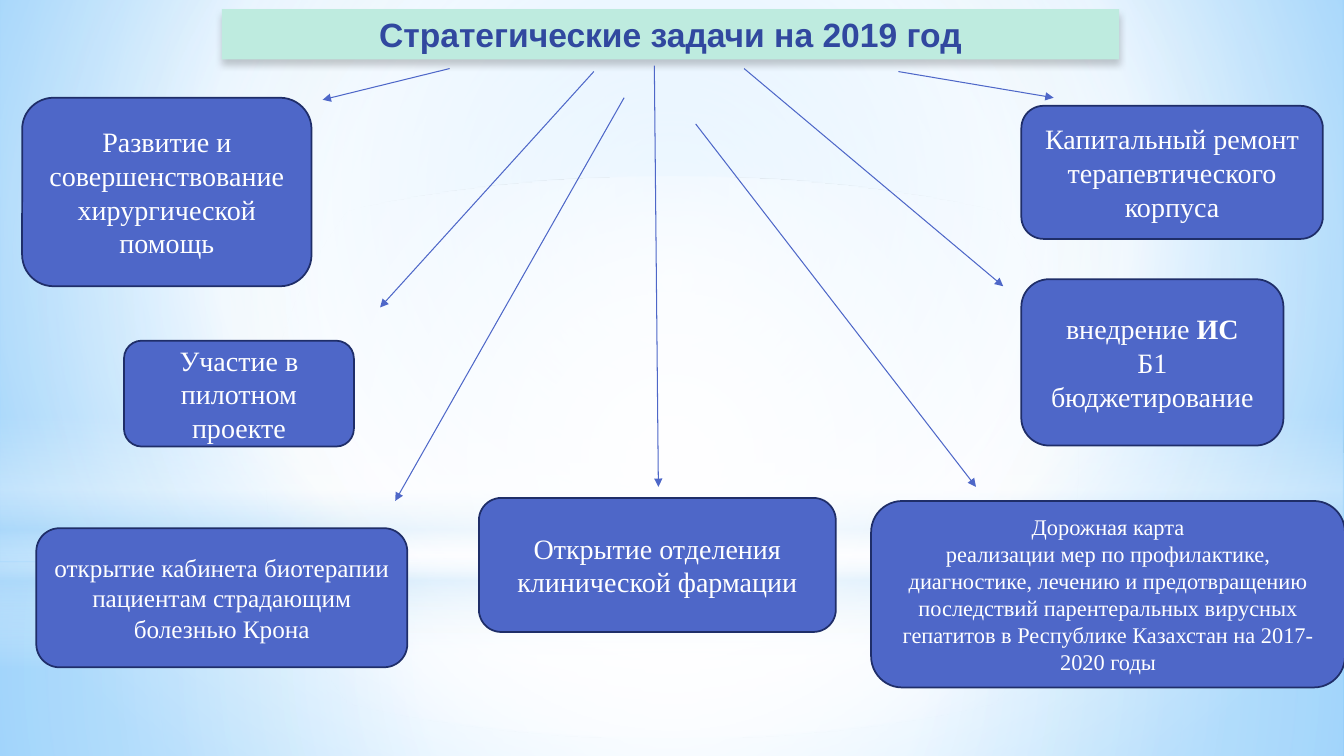
from lxml import etree
from pptx import Presentation
from pptx.dml.color import RGBColor
from pptx.enum.shapes import MSO_CONNECTOR, MSO_SHAPE
from pptx.enum.text import MSO_ANCHOR, PP_ALIGN
from pptx.oxml import parse_xml
from pptx.oxml.ns import nsdecls, qn
from pptx.util import Inches, Pt

RECT, OVAL, ROUNDED = MSO_SHAPE.RECTANGLE, MSO_SHAPE.OVAL, MSO_SHAPE.ROUNDED_RECTANGLE
STRAIGHT = MSO_CONNECTOR.STRAIGHT
MIDDLE, CENTER = MSO_ANCHOR.MIDDLE, PP_ALIGN.CENTER
W, H = 13.33, 7.5
BLUE, NAVY, WHITE, SKY = "4E67C8", "1F2E69", "FFFFFF", "B4DCFA"

BACKGROUND = [(0, "9ED5FF", 100), (60, WHITE, 100), (100, "5BB9FF", 100)]
MIDPOINT = (50, 50, 50, 50)
BACKDROP = [
    (RECT, (0, 5.58, W, 1.92), [(0, WHITE, 91), (37, WHITE, 76), (100, SKY, 79)], MIDPOINT),
    (RECT, (0, 0, W, 5.58), [(0, WHITE, 89), (48, WHITE, 62), (100, SKY, 79)], MIDPOINT),
    (RECT, (0, 4.12, W, 2.5), [(0, WHITE, 0), (29, WHITE, 30), (45, SKY, 40),
                               (55, WHITE, 26), (65, SKY, 60), (100, WHITE, 0)], None),
    (OVAL, (0, 1.75, W, 5.58), [(0, WHITE, 100), (56, WHITE, 0)], MIDPOINT),
]
TASKS = [
    ((0.22, 0.97, 2.87, 1.87), 20, ["Развитие и совершенствование хирургической помощь"],
     (4.46, 0.68, 3.2, 0.99)),
    ((10.13, 1.05, 2.99, 1.32), 20, ["Капитальный ремонт терапевтического корпуса"],
     (8.91, 0.71, 10.45, 0.97)),
    ((1.23, 3.38, 2.28, 1.05), 20, ["Участие в пилотном проекте"],
     (5.89, 0.71, 3.77, 3.05)),
    ((10.13, 2.77, 2.6, 1.65), 20, ["внедрение *ИС*", "Б1", "бюджетирование"],
     (7.38, 0.68, 9.95, 2.84)),
    ((4.75, 4.94, 3.54, 1.33), 20, ["Открытие отделения клинической фармации"],
     (6.49, 0.65, 6.53, 4.83)),
    ((0.36, 5.24, 3.68, 1.38), 18,
     ["открытие кабинета биотерапии пациентам страдающим болезнью Крона"],
     (6.19, 0.97, 3.92, 4.97)),
    ((8.64, 4.97, 4.7, 1.85), 16,
     ["Дорожная карта",
      "реализации мер по профилактике, диагностике, лечению и предотвращению последствий "
      "парентеральных вирусных гепатитов в Республике Казахстан на 2017-2020 годы"],
     (6.9, 1.23, 9.68, 4.83)),
]


def rgb(color):
    return RGBColor.from_string(color)


def lengths(box):
    return [Inches(v) for v in box]


def set_gradient(props, stops, focus):
    stop_xml = "".join(
        f'<a:gs pos="{pos * 1000}"><a:srgbClr val="{color}">'
        f'<a:alpha val="{alpha * 1000}"/></a:srgbClr></a:gs>'
        for pos, color, alpha in stops)
    if focus:
        sides = " ".join(f'{side}="{v * 1000}"' for side, v in zip("ltrb", focus))
        direction = f'<a:path path="circle"><a:fillToRect {sides}/></a:path>'
    else:
        direction = '<a:lin ang="5400000" scaled="0"/>'
    gradient = parse_xml(f'<a:gradFill {nsdecls("a")} rotWithShape="1">'
                         f'<a:gsLst>{stop_xml}</a:gsLst>{direction}</a:gradFill>')
    props.replace(props.find(qn("a:solidFill")), gradient)


def write_text(tf, lines, fmt):
    tf.word_wrap = True
    tf.vertical_anchor = MIDDLE
    for i, line in enumerate(lines):
        p = tf.add_paragraph() if i else tf.paragraphs[0]
        p.alignment = CENTER
        for j, part in enumerate(line.split("*")):
            if part:
                r = p.add_run()
                r.text = part
                r.font.color.rgb = rgb(fmt["color"])
                values = {"name": fmt["name"], "size": Pt(fmt["size"]),
                          "bold": fmt["bold"] or j % 2 == 1}
                for key, value in values.items():
                    setattr(r.font, key, value)


def add_backdrop(s):
    s.background.fill.solid()
    set_gradient(s.element.find(".//" + qn("p:bgPr")), BACKGROUND, (20, 10, 20, 60))
    for kind, box, stops, focus in BACKDROP:
        sp = s.shapes.add_shape(kind, *lengths(box))
        sp.shadow.inherit = False
        sp.line.fill.background()
        sp.fill.solid()
        set_gradient(sp.element.spPr, stops, focus)


def add_title(s, box, text):
    sp = s.shapes.title
    s.shapes.element.append(sp.element)
    for key, value in zip(("left", "top", "width", "height"), lengths(box)):
        setattr(sp, key, value)
    sp.fill.solid()
    sp.fill.fore_color.rgb = rgb("BEEBDF")
    sp.line.fill.background()
    sp.element.spPr.append(parse_xml(
        f'<a:effectLst {nsdecls("a")}><a:outerShdw blurRad="{Pt(5)}" dist="{Pt(4)}" '
        'dir="5400000" algn="t" rotWithShape="0"><a:srgbClr val="000000">'
        '<a:alpha val="20000"/></a:srgbClr></a:outerShdw></a:effectLst>'))
    write_text(sp.text_frame, [text],
               {"name": "Arial", "size": 24, "color": "31489F", "bold": True})


def add_arrow(s, ends):
    line = s.shapes.add_connector(STRAIGHT, *lengths(ends))
    line.line.color.rgb = rgb(BLUE)
    line.line.width = Pt(0.75)
    spPr = line.element.spPr
    etree.SubElement(spPr.find(qn("a:ln")), qn("a:tailEnd"), type="triangle")
    etree.SubElement(spPr, qn("a:effectLst"))


def add_task(s, box, size, lines):
    sp = s.shapes.add_shape(ROUNDED, *lengths(box))
    sp.shadow.inherit = False
    sp.fill.solid()
    sp.fill.fore_color.rgb = rgb(BLUE)
    sp.line.color.rgb = rgb(NAVY)
    sp.line.width = Pt(1.25)
    write_text(sp.text_frame, lines,
               {"name": "Times New Roman", "size": size, "color": WHITE, "bold": False})


def main():
    prs = Presentation()
    prs.slide_width, prs.slide_height = lengths((W, H))
    s = prs.slides.add_slide(prs.slide_layouts[5])
    add_backdrop(s)
    add_title(s, (2.2, 0.09, 8.9, 0.5), "Стратегические задачи на 2019 год")
    for box, size, lines, ends in TASKS:
        add_arrow(s, ends)
        add_task(s, box, size, lines)
    prs.save("out.pptx")


if __name__ == "__main__":
    main()
